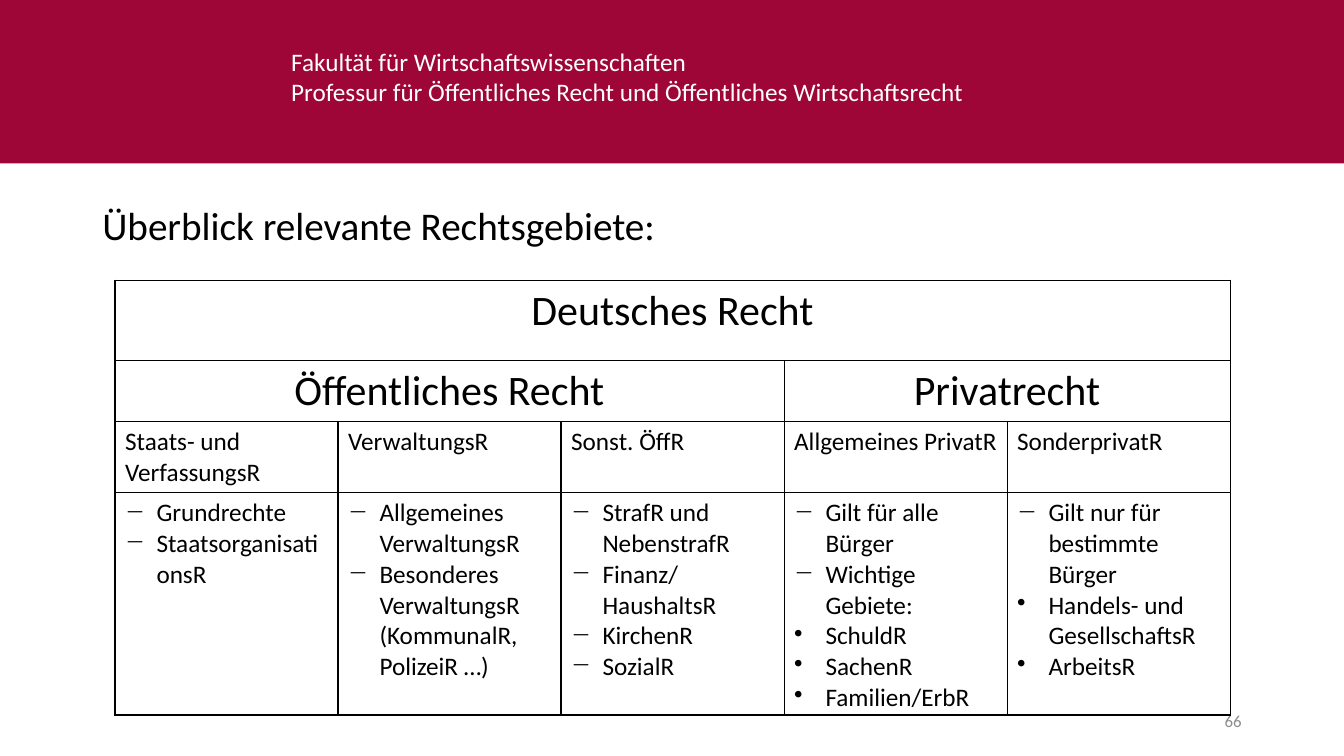
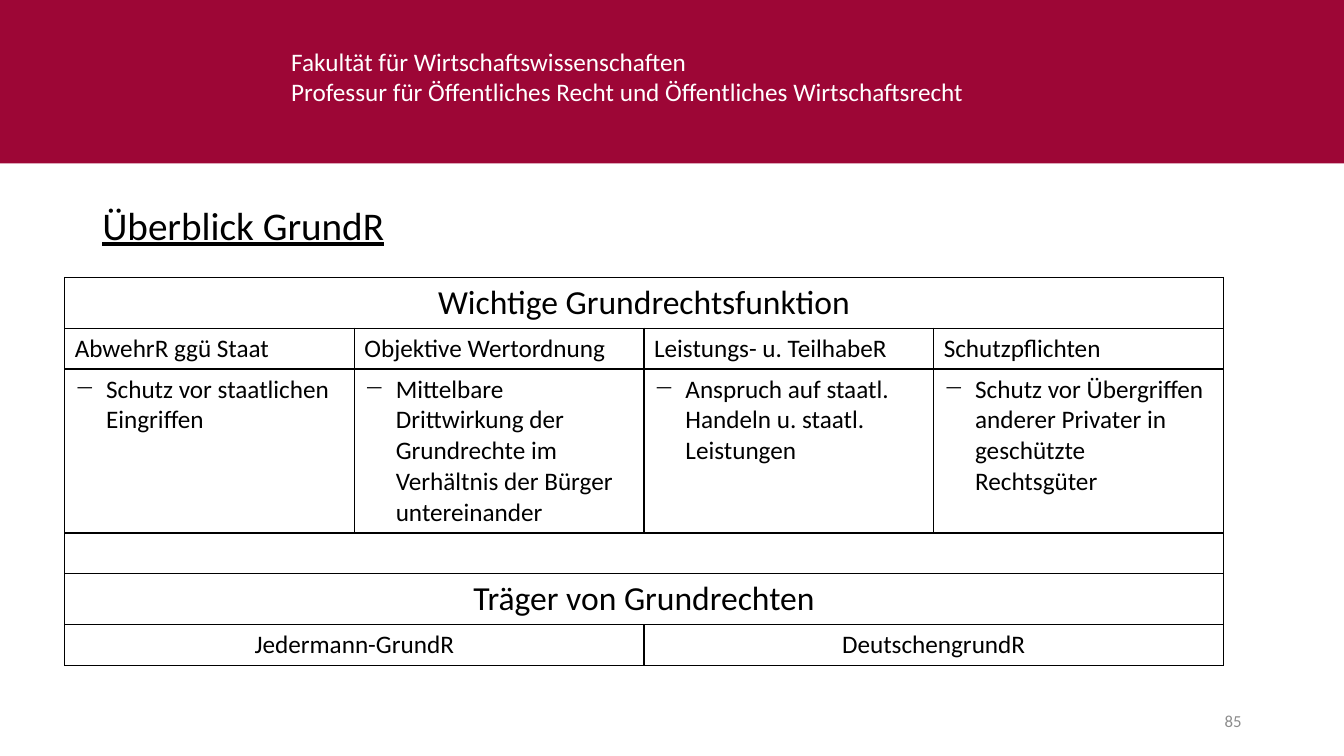
from lxml import etree
from pptx import Presentation
from pptx.dml.color import RGBColor
from pptx.enum.shapes import MSO_SHAPE
from pptx.enum.text import MSO_ANCHOR, PP_ALIGN
from pptx.oxml.ns import qn
from pptx.util import Cm, Pt

LEFT, CENTER, RIGHT = PP_ALIGN.LEFT, PP_ALIGN.CENTER, PP_ALIGN.RIGHT
TOP, MIDDLE = MSO_ANCHOR.TOP, MSO_ANCHOR.MIDDLE
RECTANGLE = MSO_SHAPE.RECTANGLE
BULLETS = ("− ", "• ")
BULLET_INDENT = Cm(0.79)


def rgb(value):
    return RGBColor.from_string(value)


def add_bullet(p, char):
    pPr = p._p.get_or_add_pPr()
    pPr.set("marL", str(BULLET_INDENT))
    pPr.set("indent", str(-BULLET_INDENT))
    etree.SubElement(pPr, qn("a:buChar")).set("char", char)


def write(tf, text, size=18, color="000000", font="Calibri", align=LEFT,
          anchor=TOP, underline=None, spacing=None):
    tf.word_wrap = True
    tf.vertical_anchor = anchor
    for i, line in enumerate(text.split("\n")):
        p = tf.add_paragraph() if i else tf.paragraphs[0]
        p.alignment = align
        if spacing:
            p.line_spacing = spacing
        if line.startswith(BULLETS):
            add_bullet(p, line[0])
            line = line[2:]
        r = p.add_run()
        r.text = line
        r.font.name = font
        r.font.size = Pt(size)
        r.font.color.rgb = rgb(color)
        r.font.underline = underline


def add_borders(cell, color, width):
    tcPr = cell._tc.get_or_add_tcPr()
    for side in ("lnL", "lnR", "lnT", "lnB"):
        ln = etree.SubElement(tcPr, qn(f"a:{side}"), w=str(Pt(width)))
        fill = etree.SubElement(ln, qn("a:solidFill"))
        etree.SubElement(fill, qn("a:srgbClr"), val=color)


class Deck:
    BAND, INK, ON_BAND, MUTED = "9D0636", "000000", "FFFFFF", "8C8C8C"
    HEADER = ("Fakultät für Wirtschaftswissenschaften\n"
              "Professur für Öffentliches Recht und Öffentliches Wirtschaftsrecht")

    def __init__(self):
        self.prs = Presentation()
        self.prs.slide_width = Cm(33.87)
        self.prs.slide_height = Cm(19.05)
        self.s = None

    def text(self, x, y, w, h, text, **style):
        sp = self.s.shapes.add_textbox(Cm(x), Cm(y), Cm(w), Cm(h))
        write(sp.text_frame, text, **style)

    def band(self):
        sp = self.s.shapes.add_shape(RECTANGLE, 0, 0, self.prs.slide_width, Cm(4.12))
        sp.shadow.inherit = False
        sp.fill.solid()
        sp.fill.fore_color.rgb = rgb(self.BAND)
        sp.line.fill.background()

    def slide(self, title, number, underline=None):
        self.s = self.prs.slides.add_slide(self.prs.slide_layouts[6])
        self.band()
        self.text(7.09, 1.04, 21.36, 1.8, self.HEADER, color=self.ON_BAND)
        self.text(2.33, 5.08, 29.21, 1.6, title, size=28, spacing=0.9,
                  underline=underline)
        self.text(23.92, 17.66, 7.62, 1.01, str(number), size=12,
                  color=self.MUTED, align=RIGHT, anchor=MIDDLE)

    def table(self, x, y, col_width, heights, rows):
        n_cols = sum(span for span, _ in rows[0][0])
        frame = self.s.shapes.add_table(len(rows), n_cols, Cm(x), Cm(y),
                                        Cm(col_width * n_cols), Cm(sum(heights)))
        table = frame.table
        table.first_row = table.horz_banding = False
        for col in table.columns:
            col.width = Cm(col_width)
        for i, (cells, style) in enumerate(rows):
            table.rows[i].height = Cm(heights[i])
            for cell in table.rows[i].cells:
                add_borders(cell, self.INK, 1)
                cell.fill.background()
            j = 0
            for span, text in cells:
                cell = table.cell(i, j)
                if span > 1:
                    cell.merge(table.cell(i, j + span - 1))
                if text:
                    write(cell.text_frame, text, **style)
                j += span

    def save(self):
        self.prs.save("out.pptx")


def singles(*texts):
    return [(1, text) for text in texts]


def build_areas_of_law(deck):
    heading = dict(size=30, align=CENTER)
    deck.slide("Überblick relevante Rechtsgebiete:", 66)
    deck.table(2.9, 7.06, 5.62, [2.03, 1.53, 1.8, 5.6], [
        ([(5, "Deutsches Recht")], heading),
        ([(3, "Öffentliches Recht"), (2, "Privatrecht")], heading),
        (singles("Staats- und VerfassungsR", "VerwaltungsR", "Sonst. ÖffR",
                 "Allgemeines PrivatR", "SonderprivatR"), {}),
        (singles(
            "− Grundrechte\n− StaatsorganisationsR",
            "− Allgemeines VerwaltungsR\n"
            "− Besonderes VerwaltungsR (KommunalR, PolizeiR …)",
            "− StrafR und NebenstrafR\n− Finanz/HaushaltsR\n− KirchenR\n− SozialR",
            "− Gilt für alle Bürger\n− Wichtige Gebiete:\n"
            "• SchuldR\n• SachenR\n• Familien/ErbR",
            "− Gilt nur für bestimmte Bürger\n"
            "• Handels- und GesellschaftsR\n• ArbeitsR"), {}),
    ])


def build_basic_rights(deck):
    heading = dict(size=24, align=CENTER)
    deck.slide("Überblick GrundR", 85, underline=True)
    deck.table(1.63, 6.99, 7.3, [1.28, 1.03, 4.13, 1.03, 1.28, 1.03], [
        ([(4, "Wichtige Grundrechtsfunktion")], heading),
        (singles("AbwehrR ggü Staat", "Objektive Wertordnung",
                 "Leistungs- u. TeilhabeR", "Schutzpflichten"), {}),
        (singles(
            "− Schutz vor staatlichen Eingriffen",
            "− Mittelbare Drittwirkung der Grundrechte im Verhältnis "
            "der Bürger untereinander",
            "− Anspruch auf staatl. Handeln u. staatl. Leistungen",
            "− Schutz vor Übergriffen anderer Privater in geschützte "
            "Rechtsgüter"), {}),
        ([(4, "")], {}),
        ([(4, "Träger von Grundrechten")], heading),
        ([(2, "Jedermann-GrundR"), (2, "DeutschengrundR")], dict(align=CENTER)),
    ])


def main():
    deck = Deck()
    build_areas_of_law(deck)
    build_basic_rights(deck)
    deck.save()


if __name__ == "__main__":
    main()
